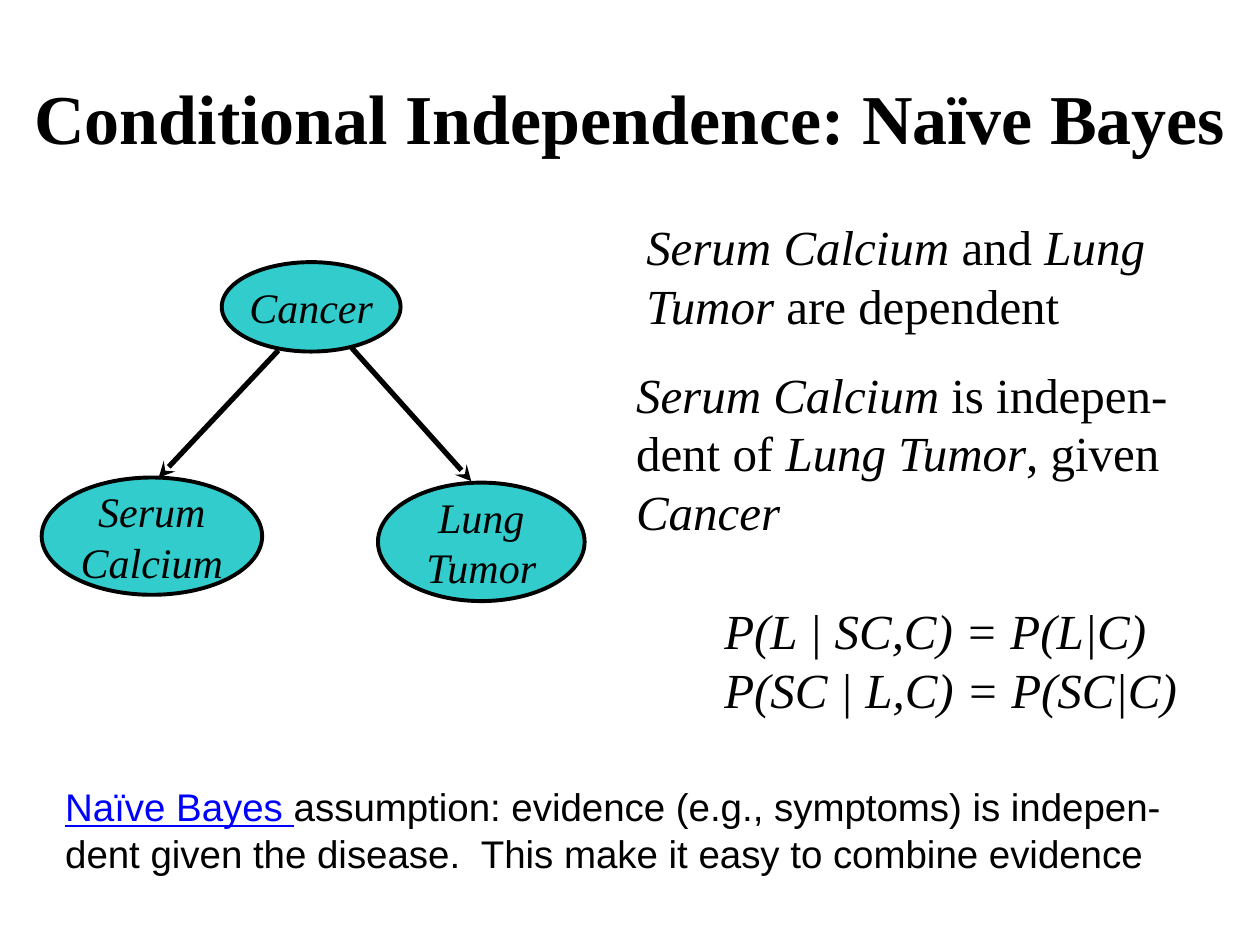
"""Build the slide on conditional independence and naïve Bayes."""
from dataclasses import dataclass
from typing import NamedTuple, Optional

from lxml import etree
from pptx import Presentation
from pptx.dml.color import RGBColor
from pptx.enum.shapes import MSO_CONNECTOR, MSO_SHAPE
from pptx.enum.text import MSO_ANCHOR, PP_ALIGN
from pptx.oxml.ns import qn
from pptx.util import Pt

OVAL = MSO_SHAPE.OVAL
STRAIGHT = MSO_CONNECTOR.STRAIGHT
MIDDLE, TOP = MSO_ANCHOR.MIDDLE, MSO_ANCHOR.TOP
CENTER, LEFT = PP_ALIGN.CENTER, PP_ALIGN.LEFT
SERIF, SANS = "Times New Roman", "Arial"
COLORS = {"ink": "000000", "node": "33CCCC", "term": "0000FF"}


class Box(NamedTuple):
    left: float
    top: float
    width: float
    height: float


class Run(NamedTuple):
    text: str
    italic: Optional[bool] = None
    underline: Optional[bool] = None
    color: str = "ink"


@dataclass
class Node:
    box: Box
    lines: list[str]


@dataclass
class Arrow:
    start: tuple[float, float]
    end: tuple[float, float]


@dataclass
class Note:
    box: Box
    paragraphs: list[list[Run]]
    size: float = 28
    font: str = SERIF
    bold: bool = False
    wrap: bool = True
    align: PP_ALIGN = LEFT
    anchor: MSO_ANCHOR = TOP


NODES = [
    Node(Box(126.7, 149.8, 102.2, 51.1), ["Cancer"]),
    Node(Box(216, 275.8, 118.1, 67.7), ["Lung", "Tumor"]),
    Node(Box(23.8, 272.9, 126, 67), ["Serum", "Calcium"]),
]
ARROWS = [
    Arrow((200.9, 198.7), (269.3, 275)),
    Arrow((159.1, 200.2), (90.7, 272.9)),
]
NOTES = [
    Note(Box(0, 21.6, 720, 90), [[Run("Conditional Independence: Naïve Bayes")]],
         size=40, bold=True, align=CENTER, anchor=MIDDLE),
    Note(Box(362.2, 120.2, 339.8, 74.2),
         [[Run("Serum Calcium", True), Run(" and "), Run("Lung Tumor", True),
           Run(" are dependent")]]),
    Note(Box(356.4, 204.5, 339.8, 108),
         [[Run("Serum Calcium", True), Run(" is indepen-dent of "),
           Run("Lung Tumor", True), Run(", given "), Run("Cancer", True)]]),
    Note(Box(406.8, 339.8, 285.8, 74.9),
         [[Run("P(L | SC,C) = P(L|C)", True)],
          [Run("P(SC | L,C) = P(SC|C)", True)]], wrap=False),
    Note(Box(30.2, 444.2, 671.8, 60.5),
         [[Run("Naïve Bayes ", underline=True, color="term"),
           Run("assumption: evidence (e.g., symptoms) is indepen-dent given "
               "the disease.  This make it easy to combine evidence")]],
         size=22, font=SANS),
]


def rgb(name: str) -> RGBColor:
    """Return the named colour."""
    return RGBColor.from_string(COLORS[name])


def draw_node(slide, node: Node) -> None:
    """Draw an ellipse with its label lines."""
    sp = slide.shapes.add_shape(OVAL, *map(Pt, node.box))
    sp.shadow.inherit = False
    sp.fill.solid()
    sp.fill.fore_color.rgb = rgb("node")
    sp.line.color.rgb = rgb("ink")
    sp.line.width = Pt(2.25)
    tf = sp.text_frame
    tf.word_wrap = False
    tf.vertical_anchor = MIDDLE
    tf.text = "\n".join(node.lines)
    for p in tf.paragraphs:
        p.alignment = CENTER
        p.font.name, p.font.size, p.font.italic = SERIF, Pt(24), True
        p.font.color.rgb = rgb("ink")


def draw_arrow(slide, arrow: Arrow) -> None:
    """Draw a straight line with a stealth head at its end."""
    cxn = slide.shapes.add_connector(
        STRAIGHT, *map(Pt, arrow.start), *map(Pt, arrow.end))
    cxn.line.color.rgb = rgb("ink")
    cxn.line.width = Pt(3)
    etree.SubElement(cxn.line._get_or_add_ln(), qn("a:tailEnd"), type="stealth")
    etree.SubElement(cxn._element.spPr, qn("a:effectLst"))


def draw_note(slide, note: Note) -> None:
    """Draw a text box made of styled runs."""
    tf = slide.shapes.add_textbox(*map(Pt, note.box)).text_frame
    tf.word_wrap = note.wrap
    tf.vertical_anchor = note.anchor
    for i, runs in enumerate(note.paragraphs):
        p = tf.add_paragraph() if i else tf.paragraphs[0]
        p.alignment = note.align
        p.font.name, p.font.size, p.font.bold = note.font, Pt(note.size), note.bold
        for run in runs:
            r = p.add_run()
            r.text = run.text
            r.font.italic = run.italic
            r.font.underline = run.underline
            r.font.color.rgb = rgb(run.color)


def main() -> None:
    """Build and save the slide."""
    prs = Presentation()
    prs.slide_width, prs.slide_height = Pt(720), Pt(540)
    s = prs.slides.add_slide(prs.slide_layouts[6])
    for arrow in ARROWS:
        draw_arrow(s, arrow)
    for node in NODES:
        draw_node(s, node)
    for note in NOTES:
        draw_note(s, note)
    prs.save("out.pptx")


if __name__ == "__main__":
    main()
